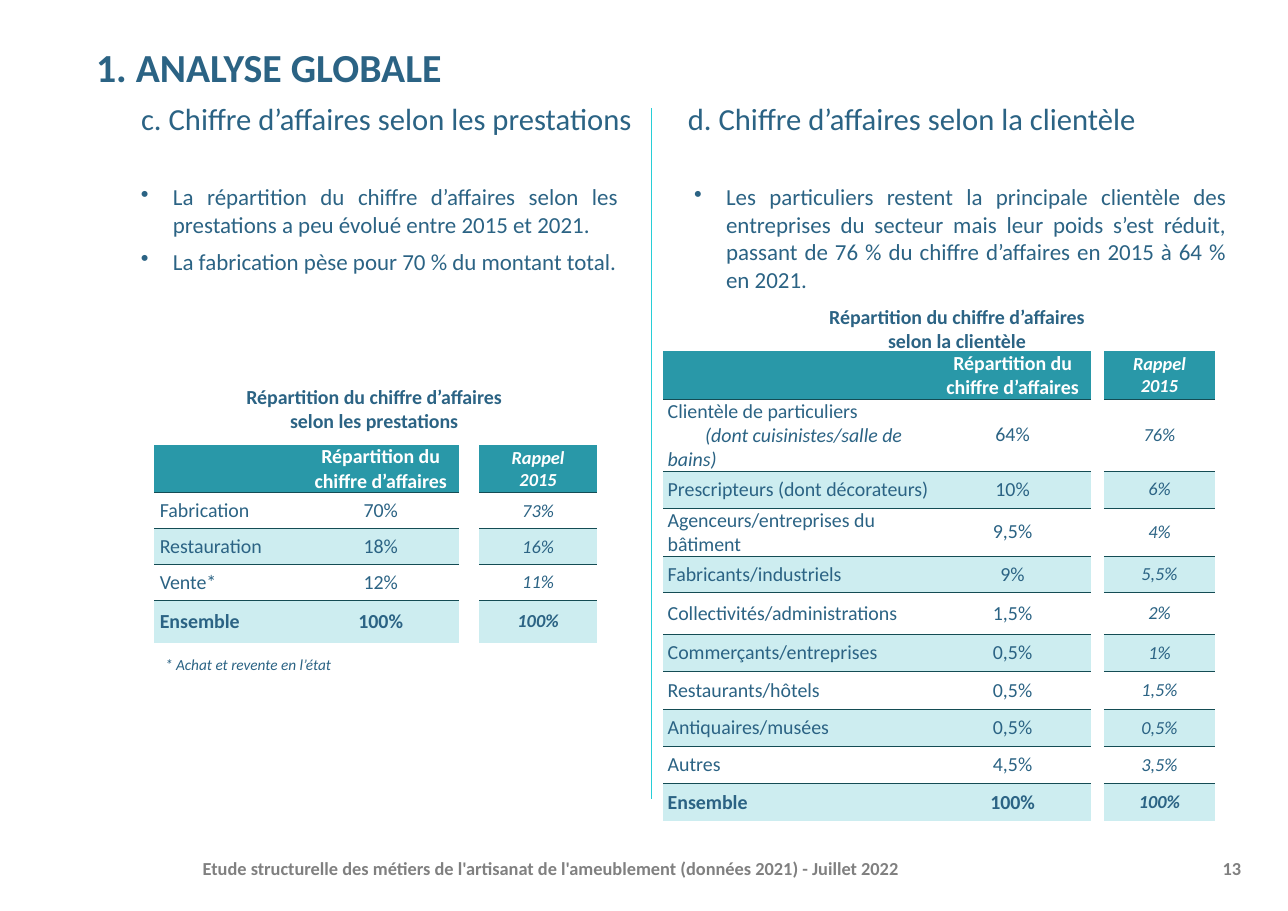
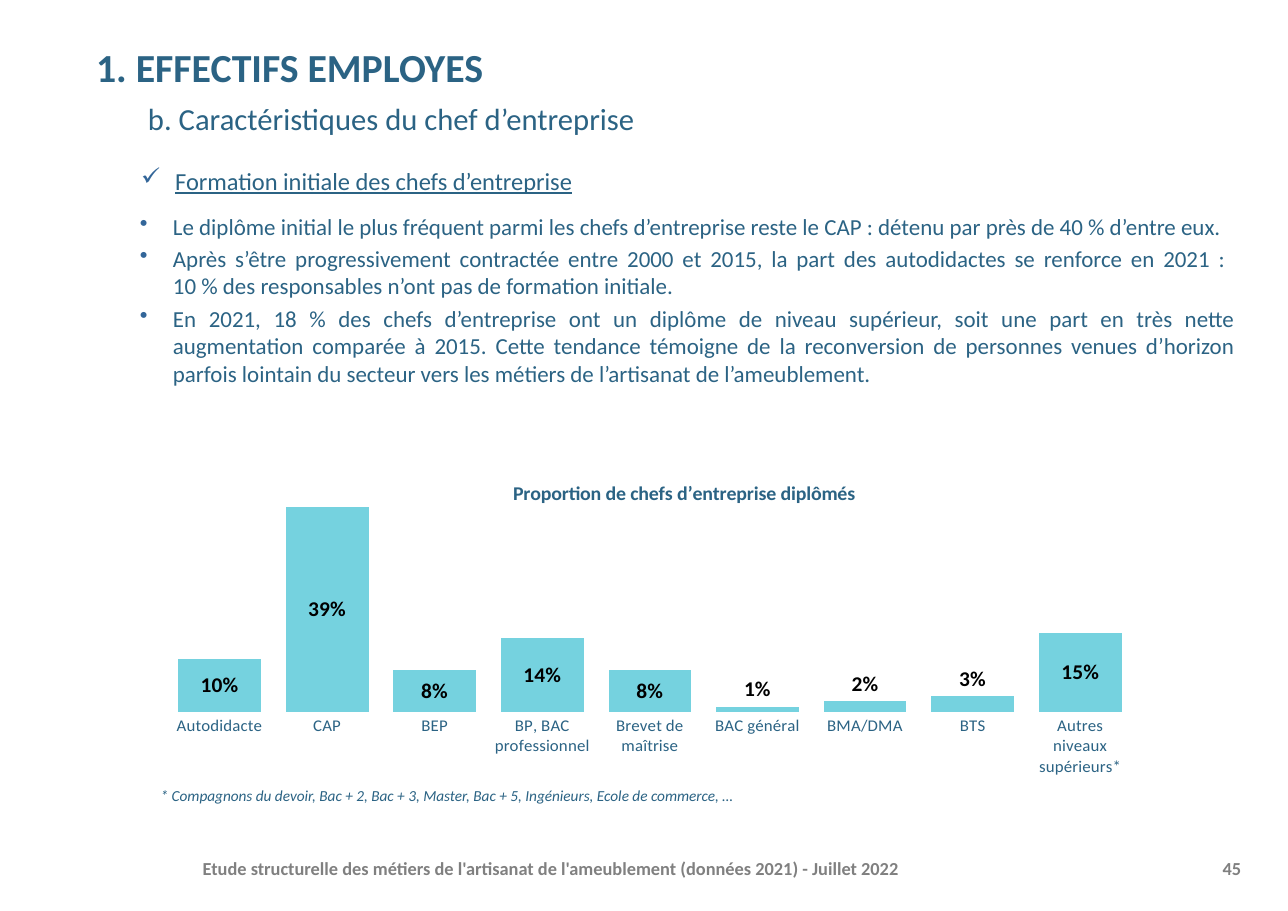
from dataclasses import dataclass
from typing import Optional, Sequence

from lxml.etree import SubElement
from pptx import Presentation
from pptx.chart.data import CategoryChartData
from pptx.dml.color import RGBColor
from pptx.enum.chart import XL_CHART_TYPE as ChartType
from pptx.enum.chart import XL_LABEL_POSITION as LabelPosition
from pptx.enum.chart import XL_TICK_MARK as TickMark
from pptx.enum.shapes import MSO_CONNECTOR as Connector
from pptx.enum.text import MSO_ANCHOR as Anchor
from pptx.enum.text import PP_ALIGN as Align
from pptx.oxml.ns import qn
from pptx.slide import Slide
from pptx.table import _Cell as Cell
from pptx.util import Inches, Pt

SLIDE_WIDTH, SLIDE_HEIGHT = Inches(11.69), Inches(8.27)
COLUMN, ROW = SLIDE_WIDTH / 100, SLIDE_HEIGHT / 100  # grid of 100 by 100
NO_STYLE_TABLE = "{2D5ABB26-0587-4C30-8999-92F81FD0307C}"
FOOTER = ("Etude structurelle des métiers de l'artisanat de l'ameublement "
          "(données 2021) - Juillet 2022")


@dataclass(frozen=True)
class TextStyle:
    size: float
    color: str
    bold: bool = False
    italic: bool = False
    underline: bool = False


@dataclass(frozen=True)
class Theme:
    font: str = "Calibri"
    ink: str = "2B6384"
    header: str = "2998A8"
    band: str = "CDEDF0"
    rule: str = "144C54"
    divider: str = "27CED7"
    bar: str = "75D2DF"
    bullet: str = "336699"
    title: TextStyle = TextStyle(26, ink, bold=True)
    subtitle: TextStyle = TextStyle(20, ink)
    section: TextStyle = TextStyle(16, ink, underline=True)
    body: TextStyle = TextStyle(15, ink)
    caption: TextStyle = TextStyle(13, ink, bold=True)
    note: TextStyle = TextStyle(10, ink, italic=True)
    footer: TextStyle = TextStyle(12, "808080", bold=True)
    axis: TextStyle = TextStyle(11, ink)
    value: TextStyle = TextStyle(14, "000000", bold=True)


THEME = Theme()


@dataclass(frozen=True)
class Frame:
    """A place on the slide, in grid columns and rows."""
    left: float
    top: float
    width: float
    height: float

    def emu(self) -> tuple[int, int, int, int]:
        return (int(self.left * COLUMN), int(self.top * ROW),
                int(self.width * COLUMN), int(self.height * ROW))


@dataclass(frozen=True)
class Bullet:
    text: str
    space_before: float = 0
    mark: str = "•"
    color: str = THEME.ink
    style: TextStyle = THEME.body
    margin: float = 0.78
    hanging: float = 0.29
    line_points: Optional[float] = None


@dataclass(frozen=True)
class TableRow:
    label: str
    share: str
    reminder: str
    height: float = 4.1


def apply_style(font, style: TextStyle) -> None:
    font.name, font.size = THEME.font, Pt(style.size)
    font.bold, font.italic, font.underline = style.bold, style.italic, style.underline
    font.color.rgb = RGBColor.from_string(style.color)


def style_paragraphs(text_frame, style: TextStyle, align: Align) -> None:
    for paragraph in text_frame.paragraphs:
        paragraph.alignment = align
        for run in paragraph.runs:
            apply_style(run.font, style)


def add_text(slide: Slide, frame: Frame, text: str, style: TextStyle,
             align: Align = Align.LEFT, anchor: Anchor = Anchor.TOP) -> None:
    text_frame = slide.shapes.add_textbox(*frame.emu()).text_frame
    text_frame.word_wrap = True
    text_frame.vertical_anchor = anchor
    text_frame.text = text
    style_paragraphs(text_frame, style, align)


def add_caption(slide: Slide, left: float, top: float, text: str) -> None:
    add_text(slide, Frame(left, top, 26.95, 6.53), text, THEME.caption,
             Align.CENTER, Anchor.MIDDLE)


def add_bullets(slide: Slide, frame: Frame, bullets: Sequence[Bullet]) -> None:
    text_frame = slide.shapes.add_textbox(*frame.emu()).text_frame
    text_frame.word_wrap = True
    text_frame.margin_left = text_frame.margin_right = 0
    text_frame.text = "\n".join(bullet.text for bullet in bullets)
    style_paragraphs(text_frame, THEME.body, Align.JUSTIFY)
    for paragraph, bullet in zip(text_frame.paragraphs, bullets):
        if bullet.line_points:
            paragraph.line_spacing = Pt(bullet.line_points)
        paragraph.space_before = Pt(bullet.space_before)
        properties = paragraph._p.get_or_add_pPr()
        properties.set("marL", str(Inches(bullet.margin)))
        properties.set("indent", str(-Inches(bullet.hanging)))
        color = SubElement(properties, qn("a:buClr"))
        SubElement(color, qn("a:srgbClr"), val=bullet.color)
        SubElement(properties, qn("a:buChar"), char=bullet.mark)
        for run in paragraph.runs:
            apply_style(run.font, bullet.style)


def add_page(presentation, number: int, title: str, subtitle: str) -> Slide:
    """Add a slide with its title, tabbed subtitle, footer and page number."""
    slide = presentation.slides.add_slide(presentation.slide_layouts[5])
    shape = slide.shapes.title
    shape.left, shape.top, shape.width, shape.height = Frame(6.76, 4.72, 87, 9.55).emu()
    text_frame = shape.text_frame
    text_frame.margin_left = text_frame.margin_right = 0
    text_frame.margin_top = text_frame.margin_bottom = 0
    text_frame.vertical_anchor = Anchor.TOP
    text_frame.text = f" {title}\v\t"
    style_paragraphs(text_frame, THEME.title, Align.LEFT)
    paragraph = text_frame.paragraphs[0]
    run = paragraph.add_run()
    run.text = subtitle
    apply_style(run.font, THEME.subtitle)
    tabs = SubElement(paragraph._p.get_or_add_pPr(), qn("a:tabLst"))
    for position in (0.49, 5.39):
        SubElement(tabs, qn("a:tab"), pos=str(Inches(position)), algn="l")
    add_text(slide, Frame(14.9, 92.6, 75.4, 5.3), FOOTER, THEME.footer,
             anchor=Anchor.MIDDLE)
    add_text(slide, Frame(90.5, 92.6, 6.7, 5.3), str(number), THEME.footer,
             Align.RIGHT, Anchor.MIDDLE)
    return slide


def add_border(cell: Cell, side: str, points: float) -> None:
    line = SubElement(cell._tc.get_or_add_tcPr(), qn(f"a:ln{side}"), w=str(Pt(points)))
    fill = SubElement(line, qn("a:solidFill"))
    SubElement(fill, qn("a:srgbClr"), val=THEME.rule)


def add_share_table(slide: Slide, left: float, top: float, widths: Sequence[float],
                    inset: float, rows: Sequence[TableRow]) -> None:
    """Draw labels and shares, then the 2015 reminder beyond an empty gap column."""
    frame = Frame(left, top, sum(widths), sum(row.height for row in rows))
    table = slide.shapes.add_table(len(rows), len(widths), *frame.emu()).table
    table._tbl.tblPr.find(qn("a:tableStyleId")).text = NO_STYLE_TABLE
    table.first_row = table.horz_banding = False
    for column, width in zip(table.columns, widths):
        column.width = int(width * COLUMN)
    total = len(rows) - 1
    for row_index, row in enumerate(rows):
        table.rows[row_index].height = int(row.height * ROW)
        for column_index, text in enumerate((row.label, row.share, "", row.reminder)):
            cell = table.cell(row_index, column_index)
            cell.margin_left = cell.margin_right = Inches(inset)
            cell.margin_top = cell.margin_bottom = 0
            cell.vertical_anchor = Anchor.MIDDLE
            cell.text = text
            is_gap, is_reminder = column_index == 2, column_index == 3
            style = TextStyle(12 if is_reminder else 13,
                              "FFFFFF" if row_index == 0 else THEME.ink,
                              bold=row_index in (0, total), italic=is_reminder)
            align = Align.CENTER if column_index else Align.LEFT
            style_paragraphs(cell.text_frame, style, align)
            if not is_gap and row_index > 0:
                add_border(cell, "T", 1 if row_index == total else 0.5)
            if not is_gap and row_index < total:
                add_border(cell, "B", 1 if row_index == total - 1 else 0.5)
            if is_gap or row_index % 2:
                cell.fill.background()
            else:
                cell.fill.solid()
                color = THEME.band if row_index else THEME.header
                cell.fill.fore_color.rgb = RGBColor.from_string(color)
            for detail in cell.text_frame.paragraphs[1:] if row_index else ():
                detail._p.get_or_add_pPr().set("indent", str(Inches(0.34)))
                for run in detail.runs:
                    run.font.italic = True


def add_divider(slide: Slide, column: float, top: float, bottom: float) -> None:
    x = int(column * COLUMN)
    line = slide.shapes.add_connector(Connector.STRAIGHT, x, int(top * ROW),
                                      x, int(bottom * ROW))
    line.line.color.rgb = RGBColor.from_string(THEME.divider)
    line.line.width = Pt(0.75)
    SubElement(line._element.spPr, qn("a:effectLst"))


def set_layout(parent, index: int, **shares: float) -> None:
    """Place a chart part by shares of the chart's size."""
    layout = parent.find(qn("c:layout"))
    if layout is None:
        layout = parent.makeelement(qn("c:layout"))
        parent.insert(index, layout)
    manual = SubElement(layout, qn("c:manualLayout"))
    if "w" in shares:
        SubElement(manual, qn("c:layoutTarget"), val="inner")
    for axis in "xy":
        SubElement(manual, qn(f"c:{axis}Mode"), val="edge")
    for name, share in shares.items():
        SubElement(manual, qn(f"c:{name}"), val=str(share))


def add_diploma_chart(slide: Slide, frame: Frame, title: str,
                      shares: dict[str, float]) -> None:
    data = CategoryChartData(number_format="0%")
    data.categories = list(shares)
    data.add_series("Diplômés", list(shares.values()))
    chart = slide.shapes.add_chart(ChartType.COLUMN_CLUSTERED, *frame.emu(), data).chart
    apply_style(chart.font, THEME.axis)
    chart.has_legend = False
    chart.chart_title.text_frame.text = title
    style_paragraphs(chart.chart_title.text_frame, THEME.caption, Align.CENTER)
    set_layout(chart.chart_title._element, 1, x=0.36, y=0.02)
    set_layout(chart._chartSpace.chart.plotArea, 0, x=0.016, y=0.106, w=0.969, h=0.703)

    value_axis, category_axis = chart.value_axis, chart.category_axis
    value_axis.visible = value_axis.has_major_gridlines = False
    value_axis.minimum_scale, value_axis.maximum_scale = 0, 0.4
    value_axis.major_unit = 0.1
    category_axis.major_tick_mark = TickMark.NONE
    category_axis.format.line.fill.background()
    apply_style(category_axis.tick_labels.font, THEME.axis)

    plot = chart.plots[0]
    plot.gap_width, plot.overlap, plot.vary_by_categories = 30, -27, False
    series = plot.series[0]
    series.format.fill.solid()
    series.format.fill.fore_color.rgb = RGBColor.from_string(THEME.bar)
    labels = series.data_labels
    labels.show_value, labels.position = True, LabelPosition.CENTER
    labels.number_format, labels.number_format_is_linked = "0%", False
    apply_style(labels.font, THEME.value)
    for index, share in enumerate(shares.values()):
        if share < 0.05:
            label = series.points[index].data_label
            apply_style(label.font, THEME.value)
            label.position = LabelPosition.OUTSIDE_END


def build_turnover_slide(presentation) -> None:
    slide = add_page(presentation, 13, "1. ANALYSE GLOBALE",
                     "c. Chiffre d’affaires selon les prestations\t d. Chiffre d’affaires selon la clientèle")
    add_bullets(slide, Frame(6.76, 19.47, 41.23, 16), [
        Bullet("La répartition du chiffre d’affaires selon les prestations a peu évolué entre 2015 et 2021.",
               line_points=18),
        Bullet("La fabrication pèse pour 70 % du montant total.", 6, line_points=18)])
    add_bullets(slide, Frame(50.56, 19.47, 44.65, 16), [
        Bullet("Les particuliers restent la principale clientèle des entreprises du secteur mais leur poids s’est réduit, passant de 76 % du chiffre d’affaires en 2015 à 64 % en 2021.",
               margin=0.68, line_points=18)])
    add_divider(slide, 50.56, 11.85, 87.67)
    header = TableRow("", "Répartition du chiffre d’affaires", "Rappel\n2015", 4.96)
    add_caption(slide, 15.57, 41.6, "Répartition du chiffre d’affaires\nselon les prestations")
    add_share_table(slide, 11.98, 48.85, (11.46, 12.23, 1.54, 9.15), 0.05, [
        header,
        TableRow("Fabrication", "70%", "73%", 3.95),
        TableRow("Restauration", "18%", "16%", 3.95),
        TableRow("Vente*", "12%", "11%", 3.95),
        TableRow("Ensemble", "100%", "100%", 4.6)])
    add_text(slide, Frame(11.98, 71.34, 20.2, 3.26), "* Achat et revente en l’état", THEME.note)
    add_caption(slide, 60.82, 32.77, "Répartition du chiffre d’affaires\nselon la clientèle")
    add_share_table(slide, 51.5, 38.57, (21.04, 12.15, 0.94, 8.64), 0.04, [
        header,
        TableRow("Clientèle de particuliers\n(dont cuisinistes/salle de bains)", "64%", "76%", 5.2),
        TableRow("Prescripteurs (dont décorateurs)", "10%", "6%"),
        TableRow("Agenceurs/entreprises du bâtiment", "9,5%", "4%"),
        TableRow("Fabricants/industriels", "9%", "5,5%", 4),
        TableRow("Collectivités/administrations", "1,5%", "2%", 4.6),
        TableRow("Commerçants/entreprises", "0,5%", "1%"),
        TableRow("Restaurants/hôtels", "0,5%", "1,5%"),
        TableRow("Antiquaires/musées", "0,5%", "0,5%"),
        TableRow("Autres", "4,5%", "3,5%"),
        TableRow("Ensemble", "100%", "100%")])


def build_training_slide(presentation) -> None:
    slide = add_page(presentation, 45, "1. EFFECTIFS EMPLOYES",
                     " b. Caractéristiques du chef d’entreprise")
    facts = (
        ("Le diplôme initial le plus fréquent parmi les chefs d’entreprise reste le CAP : détenu par près de 40 % d’entre eux.", 11),
        ("Après s’être progressivement contractée entre 2000 et 2015, la part des autodidactes se renforce en 2021 : \v10 % des responsables n’ont pas de formation initiale.", 3),
        ("En 2021, 18 % des chefs d’entreprise ont un diplôme de niveau supérieur, soit une part en très nette augmentation comparée à 2015. Cette tendance témoigne de la reconversion de personnes venues d’horizon parfois lointain du secteur vers les métiers de l’artisanat de l’ameublement.", 3))
    add_bullets(slide, Frame(6.76, 17.65, 89.14, 30), [
        Bullet("Formation initiale des chefs d’entreprise", 0, "✓", THEME.bullet,
               THEME.section, 0.8, 0.31),
        *(Bullet(text, space, color=THEME.bullet, hanging=0.3) for text, space in facts)])
    add_diploma_chart(slide, Frame(11.63, 51.63, 77.59, 33.62),
                      "Proportion de chefs d’entreprise diplômés", {
        "Autodidacte": 0.1, "CAP": 0.39, "BEP": 0.08, "BP, BAC professionnel": 0.14,
        "Brevet de maîtrise": 0.08, "BAC général": 0.01, "BMA/DMA": 0.02, "BTS": 0.03,
        "Autres niveaux supérieurs*": 0.15})
    add_text(slide, Frame(11.63, 85.73, 50.56, 3.26),
             "* Compagnons du devoir, Bac + 2, Bac + 3, Master, Bac + 5, Ingénieurs, Ecole de commerce, …",
             THEME.note)


def main() -> None:
    presentation = Presentation()
    presentation.slide_width, presentation.slide_height = SLIDE_WIDTH, SLIDE_HEIGHT
    build_turnover_slide(presentation)
    build_training_slide(presentation)
    presentation.save("out.pptx")


if __name__ == "__main__":
    main()
